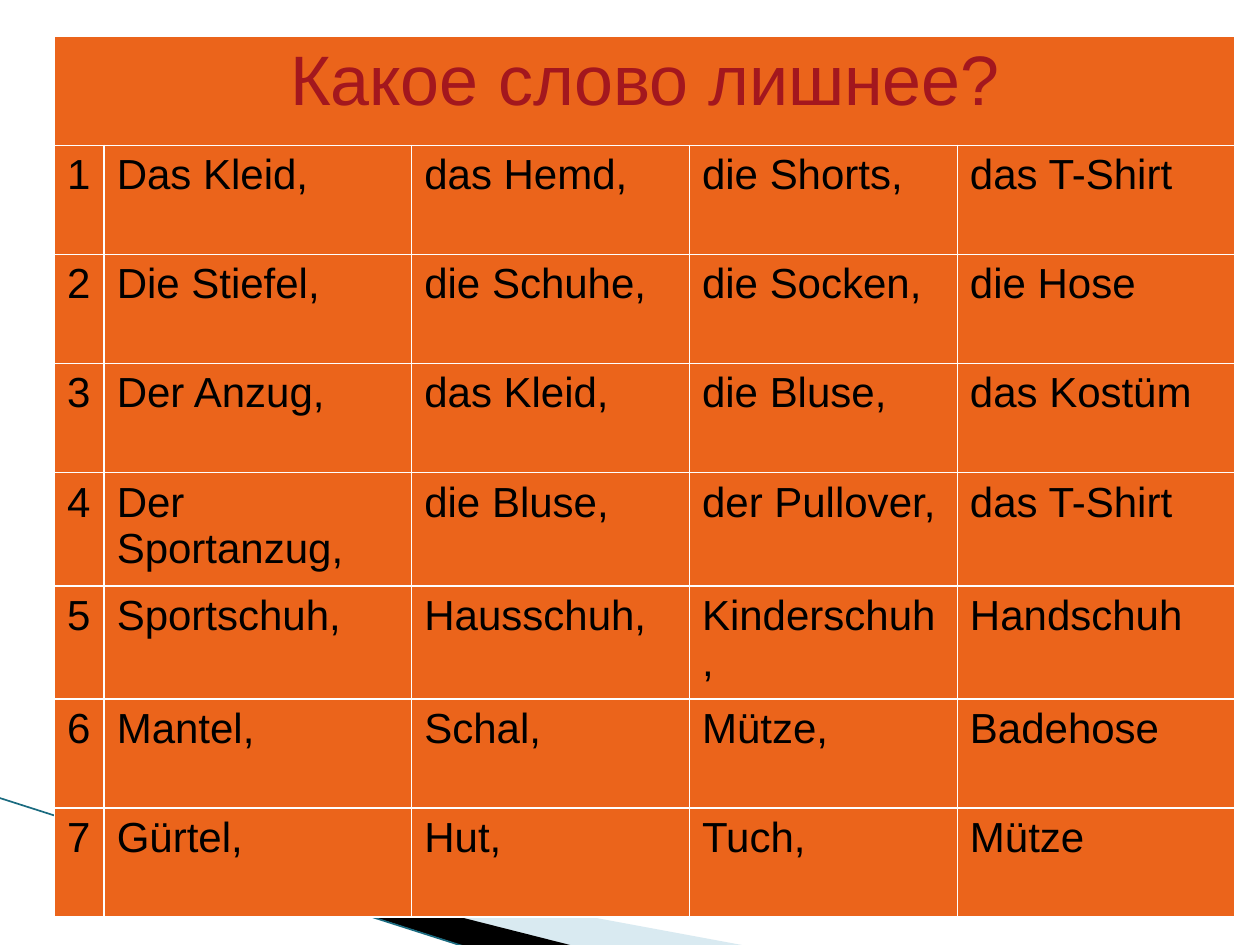
from lxml import etree
from pptx import Presentation
from pptx.dml.color import RGBColor
from pptx.enum import shapes, text
from pptx.oxml import ns
from pptx.util import Cm, Pt

WHITE = RGBColor(0xFF, 0xFF, 0xFF)
BLACK = RGBColor(0x00, 0x00, 0x00)
ORANGE = RGBColor(0xEB, 0x64, 0x1B)
RED = RGBColor(0xA3, 0x17, 0x1E)
PALE_BLUE = RGBColor(0xA0, 0xCB, 0xDC)
TEAL = RGBColor(0x1A, 0x6B, 0x80)

FONT = "Arial"
TITLE = "Какое слово лишнее?"
WORDS = [
    ["Das Kleid,", "das Hemd,", "die Shorts,", "das T-Shirt"],
    ["Die Stiefel,", "die Schuhe,", "die Socken,", "die Hose"],
    ["Der Anzug,", "das Kleid,", "die Bluse,", "das Kostüm"],
    ["Der Sportanzug,", "die Bluse,", "der Pullover,", "das T-Shirt"],
    ["Sportschuh,", "Hausschuh,", "Kinderschuh,", "Handschuh"],
    ["Mantel,", "Schal,", "Mütze,", "Badehose"],
    ["Gürtel,", "Hut,", "Tuch,", "Mütze"],
]
COLUMN_WIDTHS = [1, 6.2, 5.6, 5.4, 5.6]
ROW_HEIGHT = 2.2
TALL_ROW_HEIGHT = 2.28
TALL_ROWS = (4, 5)


def set_frame(shape, frame):
    left, top, width, height = [Cm(value) for value in frame]
    shift_x, shift_y = shape.left - left, shape.top - top
    outline = next(shape._element.iter(ns.qn("a:path")))
    outline.set("w", str(width))
    outline.set("h", str(height))
    for point in outline.iter(ns.qn("a:pt")):
        point.set("x", str(int(point.get("x")) + shift_x))
        point.set("y", str(int(point.get("y")) + shift_y))
    shape.left, shape.top, shape.width, shape.height = left, top, width, height


def add_wedge(slide, points, frame, color, opacity=100):
    corners = [(Cm(x), Cm(y)) for x, y in points]
    builder = slide.shapes.build_freeform(*corners[0])
    builder.add_line_segments(corners[1:], close=True)
    shape = builder.convert_to_shape()
    set_frame(shape, frame)
    shape.shadow.inherit = False
    shape.line.fill.background()
    shape.fill.solid()
    shape.fill.fore_color.rgb = color
    if opacity < 100:
        color_element = shape.fill._xPr.find(ns.qn("a:solidFill"))[0]
        alpha = etree.SubElement(color_element, ns.qn("a:alpha"))
        alpha.set("val", str(opacity * 1000))


def add_line(slide, start, end, color, width):
    ends = [Cm(value) for value in (*start, *end)]
    line = slide.shapes.add_connector(shapes.MSO_CONNECTOR.STRAIGHT, *ends)
    line.line.color.rgb = color
    line.line.width = Pt(width)
    etree.SubElement(line._element.spPr, ns.qn("a:effectLst"))


def format_cell(cell):
    properties = cell._tc.get_or_add_tcPr()
    for side in ("lnL", "lnR", "lnT", "lnB"):
        border = etree.SubElement(properties, ns.qn(f"a:{side}"))
        border.set("w", str(Pt(1)))
        fill = etree.SubElement(border, ns.qn("a:solidFill"))
        etree.SubElement(fill, ns.qn("a:srgbClr")).set("val", str(WHITE))
    cell.fill.solid()
    cell.fill.fore_color.rgb = ORANGE


def write_cell(cell, content, size, color, alignment):
    cell.text_frame.text = content
    paragraph = cell.text_frame.paragraphs[0]
    paragraph.alignment = alignment
    font = paragraph.runs[0].font
    font.name = FONT
    font.size = Pt(size)
    font.bold = False
    font.color.rgb = color


def add_word_table(slide):
    row_count = len(WORDS) + 1
    heights = [TALL_ROW_HEIGHT if row in TALL_ROWS else ROW_HEIGHT for row in range(row_count)]
    frame = slide.shapes.add_table(
        row_count, len(COLUMN_WIDTHS), Cm(1.1), Cm(0.73),
        Cm(sum(COLUMN_WIDTHS)), Cm(sum(heights)),
    )
    table = frame.table
    for column, width in zip(table.columns, COLUMN_WIDTHS):
        column.width = Cm(width)
    for row, height in zip(table.rows, heights):
        row.height = Cm(height)

    for cell in table.rows[0].cells:
        format_cell(cell)
    title = table.cell(0, 0)
    title.merge(table.cell(0, len(COLUMN_WIDTHS) - 1))
    write_cell(title, TITLE, 40, RED, text.PP_ALIGN.CENTER)

    for number, words in enumerate(WORDS, start=1):
        for cell, content in zip(table.rows[number].cells, [str(number), *words]):
            format_cell(cell)
            write_cell(cell, content, 24, BLACK, text.PP_ALIGN.LEFT)


def main():
    presentation = Presentation()
    presentation.slide_width = Cm(25.4)
    presentation.slide_height = Cm(19.05)
    slide = presentation.slides.add_slide(presentation.slide_layouts[6])
    add_wedge(
        slide, [(1.4, 16.54), (15.11, 19.08), (11.58, 19.08), (1.4, 16.51)],
        (1.98, 13.89, 10.57, 4.01), PALE_BLUE, opacity=40,
    )
    add_wedge(
        slide, [(1.35, 16.48), (11.61, 19.08), (9.45, 19.1), (1.37, 16.51)],
        (-0.15, 16.08, 10.57, 2.34), BLACK,
    )
    add_line(slide, (-0.03, 16.08), (9.42, 19.1), TEAL, 0.95)
    add_word_table(slide)
    presentation.save("out.pptx")


if __name__ == "__main__":
    main()
